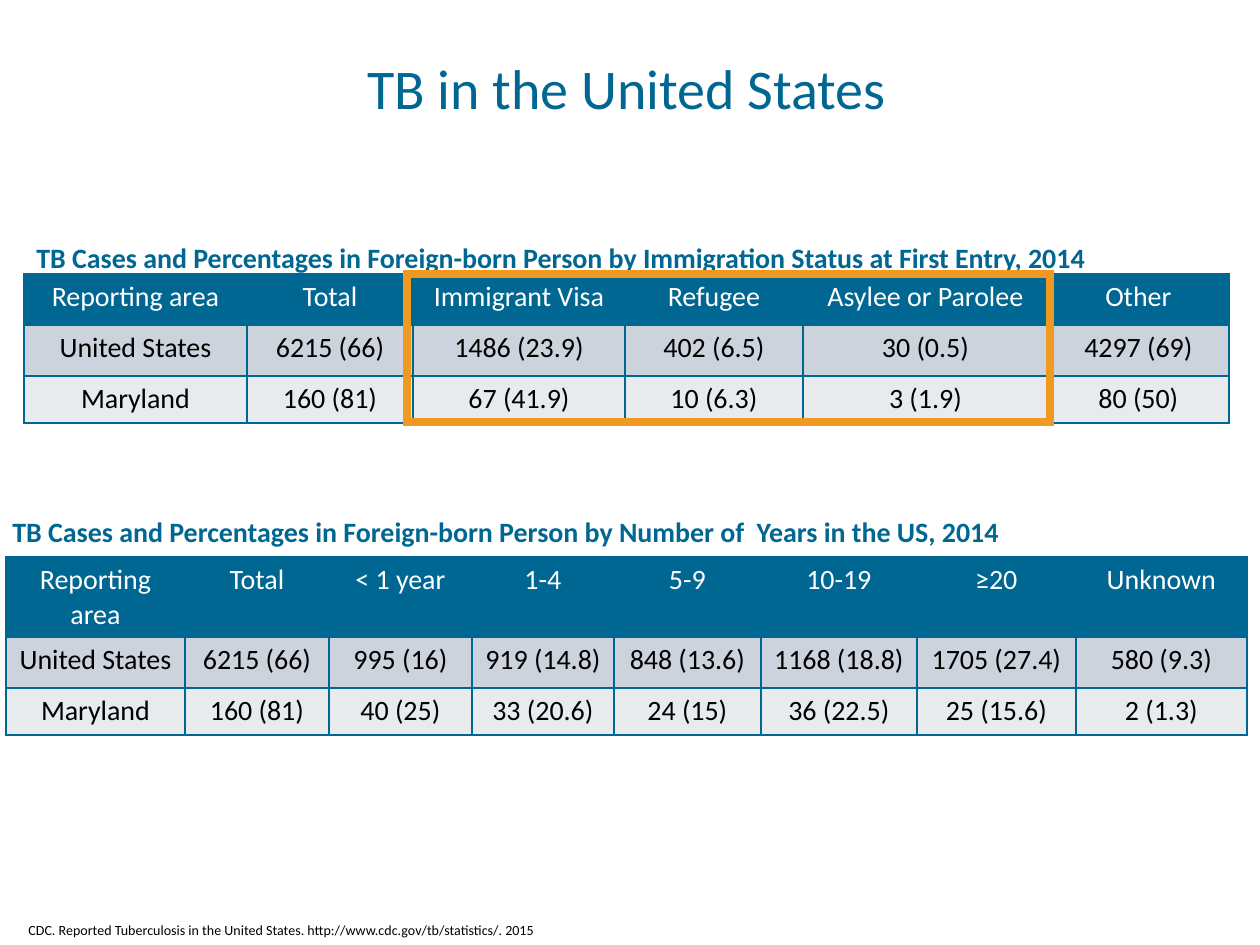
"""Build the slide on TB cases in the United States."""
from dataclasses import dataclass

from lxml.etree import SubElement
from pptx import Presentation
from pptx.dml.color import RGBColor
from pptx.enum.shapes import MSO_SHAPE
from pptx.enum.text import MSO_ANCHOR, MSO_AUTO_SIZE, PP_ALIGN
from pptx.oxml.ns import qn
from pptx.util import Emu, Pt

EMU_PER_PX = 914400 / 126
FONT = "Calibri"
TEAL, ORANGE, WHITE, BLACK = "006792", "F09920", "FFFFFF", "000000"
ROW_FILLS = (TEAL, "CCD3DC", "E7EBEE")
ROW_INKS = (WHITE, BLACK, BLACK)
ROW_HEIGHTS = (51, 51, 47)


@dataclass(frozen=True)
class Box:
    """A rectangle in px."""
    left: int
    top: int
    width: int
    height: int


@dataclass(frozen=True)
class Label:
    """A line of text with its place and style."""
    text: str
    box: Box
    size: int
    ink: str = TEAL
    bold: bool = False
    align: PP_ALIGN = PP_ALIGN.LEFT
    anchor: MSO_ANCHOR = MSO_ANCHOR.TOP
    spacing: float = 0.9
    fit: MSO_AUTO_SIZE = MSO_AUTO_SIZE.NONE


@dataclass(frozen=True)
class CaseTable:
    """A table of case counts by reporting area."""
    left: int
    top: int
    widths: tuple[int, ...]
    rows: tuple[tuple[str, ...], ...]


TITLE = Label("TB in the United States", Box(44, 55, 1166, 97), 32, align=PP_ALIGN.CENTER)
STATUS_HEADING = Label(
    "TB Cases and Percentages in Foreign-born Person by Immigration Status at First Entry, 2014",
    Box(24, 231, 1449, 57), 16, bold=True, anchor=MSO_ANCHOR.MIDDLE)
YEARS_HEADING = Label(
    "TB Cases and Percentages in Foreign-born Person by Number of  Years in the US, 2014",
    Box(0, 512, 1449, 57), 16, bold=True)
CITATION = Label(
    "CDC. Reported Tuberculosis in the United States. http://www.cdc.gov/tb/statistics/. 2015",
    Box(16, 915, 914, 30), 8, BLACK, spacing=1.0, fit=MSO_AUTO_SIZE.SHAPE_TO_FIT_TEXT)

STATUS_TABLE = CaseTable(24, 274, (223, 166, 212, 178, 245, 181), (
    ("Reporting area", "Total", "Immigrant Visa", "Refugee", "Asylee or Parolee", "Other"),
    ("United States", "6215 (66)", "1486 (23.9)", "402 (6.5)", "30 (0.5)", "4297 (69)"),
    ("Maryland", "160 (81)", "67 (41.9)", "10 (6.3)", "3 (1.9)", "80 (50)"),
))
YEARS_TABLE = CaseTable(6, 557, (179, 144, 143, 142, 147, 156, 159, 171), (
    ("Reporting area", "Total", "< 1 year", "1-4", "5-9", "10-19", "≥20", "Unknown"),
    ("United States", "6215 (66)", "995 (16)", "919 (14.8)", "848 (13.6)",
     "1168 (18.8)", "1705 (27.4)", "580 (9.3)"),
    ("Maryland", "160 (81)", "40 (25)", "33 (20.6)", "24 (15)",
     "36 (22.5)", "25 (15.6)", "2 (1.3)"),
))
ENTRY_HIGHLIGHT = Box(407, 274, 643, 148)


def px(length: int) -> Emu:
    """Turn px into EMU."""
    return Emu(round(length * EMU_PER_PX))


def place(box: Box) -> tuple[Emu, Emu, Emu, Emu]:
    """Give a box as EMU arguments."""
    return px(box.left), px(box.top), px(box.width), px(box.height)


def color(code: str) -> RGBColor:
    """Turn a hex string into a colour."""
    return RGBColor.from_string(code)


def add_run(paragraph, text: str, size: int, ink: str, bold: bool = False) -> None:
    """Add one styled run to a paragraph."""
    run = paragraph.add_run()
    run.text = text
    run.font.name = FONT
    run.font.size = Pt(size)
    run.font.bold = bold
    run.font.color.rgb = color(ink)


def draw_label(slide, label: Label) -> None:
    """Draw a label as a text box."""
    frame = slide.shapes.add_textbox(*place(label.box)).text_frame
    frame.word_wrap = True
    frame.auto_size = label.fit
    frame.vertical_anchor = label.anchor
    paragraph = frame.paragraphs[0]
    paragraph.alignment = label.align
    paragraph.line_spacing = label.spacing
    add_run(paragraph, label.text, label.size, label.ink, label.bold)


def add_borders(cell) -> None:
    """Rule all four sides of a cell."""
    properties = cell._tc.get_or_add_tcPr()
    for side in ("a:lnL", "a:lnR", "a:lnT", "a:lnB"):
        rule = SubElement(properties, qn(side), w=str(Pt(1)))
        SubElement(SubElement(rule, qn("a:solidFill")), qn("a:srgbClr"), val=TEAL)


def draw_table(slide, cases: CaseTable) -> None:
    """Draw a case table with one fill per row."""
    box = Box(cases.left, cases.top, sum(cases.widths), sum(ROW_HEIGHTS))
    table = slide.shapes.add_table(len(cases.rows), len(cases.widths), *place(box)).table
    table.first_row = table.horz_banding = False
    for column, width in zip(table.columns, cases.widths):
        column.width = px(width)
    for row, height, texts, fill, ink in zip(
            table.rows, ROW_HEIGHTS, cases.rows, ROW_FILLS, ROW_INKS):
        row.height = px(height)
        for cell, text in zip(row.cells, texts):
            add_borders(cell)
            cell.fill.solid()
            cell.fill.fore_color.rgb = color(fill)
            paragraph = cell.text_frame.paragraphs[0]
            paragraph.alignment = PP_ALIGN.CENTER
            add_run(paragraph, text, 16, ink)


def draw_highlight(slide, box: Box) -> None:
    """Draw a hollow frame with sharp corners."""
    frame = slide.shapes.add_shape(MSO_SHAPE.RECTANGLE, *place(box))
    frame.shadow.inherit = False
    frame.fill.background()
    frame.line.color.rgb = color(ORANGE)
    frame.line.width = Pt(4.5)
    SubElement(frame._element.spPr.find(qn("a:ln")), qn("a:miter"), lim="800000")


def main() -> None:
    """Build and save the slide."""
    deck = Presentation()
    deck.slide_width, deck.slide_height = px(1260), px(945)
    slide = deck.slides.add_slide(deck.slide_layouts[6])
    for label in (CITATION, TITLE, STATUS_HEADING):
        draw_label(slide, label)
    draw_table(slide, STATUS_TABLE)
    draw_label(slide, YEARS_HEADING)
    draw_table(slide, YEARS_TABLE)
    draw_highlight(slide, ENTRY_HIGHLIGHT)
    deck.save("out.pptx")


if __name__ == "__main__":
    main()
